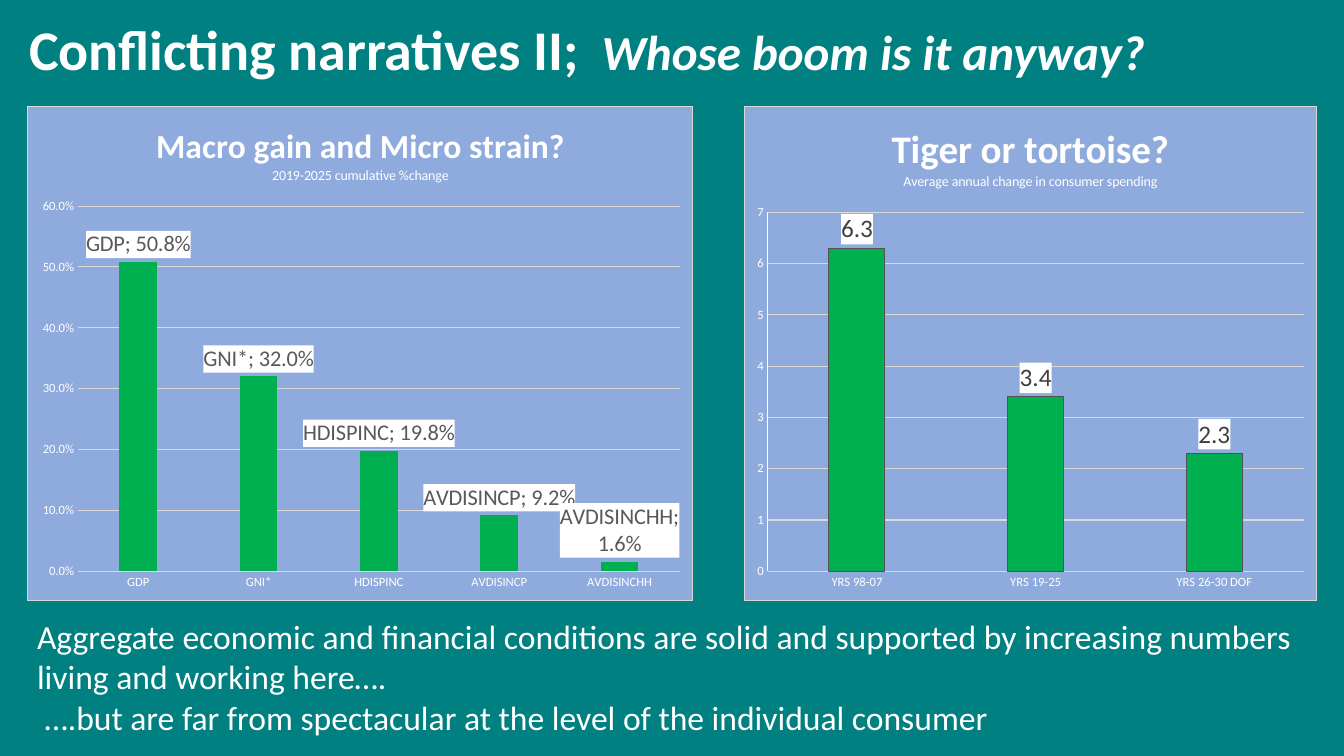
from pptx import Presentation, util as u, oxml
from pptx.chart import data as cd
from pptx.dml import color as col
from pptx.enum import chart as ce, text as te
from pptx.oxml import ns

Pt = u.Pt
theme = {
    "face": "Calibri",
    "back": "008080", "panel": "8FAADC", "bar": "00B050", "edge": "525252",
    "white": "FFFFFF", "rule": "D9D9D9", "black": "000000",
    "head": 40, "gap": 36, "ask": 35, "body": 24, "sub": 10, "axis": 9, "base": 10,
}


def style(font, size, color, **more):
    values = {"name": theme["face"], "size": Pt(size), **more}
    for key, value in values.items():
        setattr(font, key, value)
    font.color.rgb = col.RGBColor.from_string(color)


def paint(fill, line=""):
    edge = f'<a:ln w="9525"><a:solidFill><a:srgbClr val="{line}"/></a:solidFill></a:ln>' if line else ""
    return oxml.parse_xml(
        f'<c:spPr {ns.nsdecls("c", "a")}><a:solidFill><a:srgbClr val="{fill}"/></a:solidFill>{edge}</c:spPr>')


deck = Presentation()
deck.slide_width, deck.slide_height = Pt(960), Pt(540)
slide = deck.slides.add_slide(deck.slide_layouts[6])
slide.background.fill.solid()
slide.background.fill.fore_color.rgb = col.RGBColor.from_string(theme["back"])

texts = [
    ((13.7, 6.5, 921, 55.4), [
        (0, [("Conflicting narratives II;", theme["head"], {"bold": True}, 0),
             (" ", theme["gap"], {"italic": True}, 8),
             ("Whose boom is it anyway?", theme["ask"], {"bold": True, "italic": True}, 0)])]),
    ((19.4, 436.3, 940.6, 94.3), [
        (0, [("Aggregate economic and financial conditions are solid and supported by "
              "increasing numbers living and working here….", theme["body"], {}, 0)]),
        (5.4, [("….but are far from spectacular at the level of the individual consumer",
                theme["body"], {}, 0)])]),
]
for place, paras in texts:
    frame = slide.shapes.add_textbox(*map(Pt, place)).text_frame
    frame.word_wrap = True
    frame.auto_size = te.MSO_AUTO_SIZE.SHAPE_TO_FIT_TEXT
    for i, (indent, runs) in enumerate(paras):
        para = frame.add_paragraph() if i else frame.paragraphs[0]
        if indent:
            para._p.get_or_add_pPr().set("marL", str(Pt(indent)))
        for words, size, more, space in runs:
            run = para.add_run()
            run.text = words
            style(run.font, size, theme["white"], **more)
            if space:
                run.font._element.set("spc", str(space * 100))

panels = [
    {"place": (531.4, 75.6, 409, 353.5), "plot": (548, 151.5, 383.5, 257),
     "title": ("Tiger or tortoise?", 28), "sub": "Average annual change in consumer spending",
     "data": {"YRS 98-07": 6.3, "YRS 19-25": 3.4, "YRS 26-30 DOF": 2.3},
     "top": 7, "step": 1, "form": "General", "label": (18, "404040"),
     "cat": False, "axis": True, "edge": True},
    {"place": (19.4, 75.6, 476, 353.5), "plot": (55.5, 147, 430.5, 261.5),
     "title": ("Macro gain and Micro strain?", 24), "sub": "2019-2025 cumulative %change",
     "data": {"GDP": 0.508, "GNI*": 0.32, "HDISPINC": 0.198, "AVDISINCP": 0.092, "AVDISINCHH": 0.016},
     "top": 0.6, "step": 0.1, "form": "0.0%", "label": (16, "595959"),
     "cat": True, "axis": False, "edge": False},
]
for panel in panels:
    data = cd.CategoryChartData(number_format=panel["form"])
    data.categories = list(panel["data"])
    data.add_series("Series 1", list(panel["data"].values()))
    chart = slide.shapes.add_chart(
        ce.XL_CHART_TYPE.COLUMN_CLUSTERED, *map(Pt, panel["place"]), data).chart
    style(chart.font, theme["base"], theme["black"])
    chart.has_legend = False
    root = chart.element
    root.find(ns.qn("c:chart")).addnext(paint(theme["panel"], theme["rule"]))

    frame = chart.chart_title.text_frame
    lines = [(*panel["title"], True), (panel["sub"], theme["sub"], False)]
    for i, (words, size, bold) in enumerate(lines):
        para = frame.add_paragraph() if i else frame.paragraphs[0]
        run = para.add_run()
        run.text = words
        style(run.font, size, theme["white"], bold=bold)

    left, top, wide, high = panel["place"]
    x, y, w, h = panel["plot"]
    parts = {"x": (x - left) / wide, "y": (y - top) / high, "w": w / wide, "h": h / high}
    marks = "".join(f'<c:{k} val="{v:.4f}"/>' for k, v in parts.items())
    area = root.find(".//" + ns.qn("c:plotArea"))
    for old in area.findall(ns.qn("c:layout")):
        area.remove(old)
    area.insert(0, oxml.parse_xml(
        f'<c:layout {ns.nsdecls("c")}><c:manualLayout><c:layoutTarget val="inner"/>'
        f'<c:xMode val="edge"/><c:yMode val="edge"/>{marks}</c:manualLayout></c:layout>'))

    cats, vals = chart.category_axis, chart.value_axis
    for axis, shade in ((cats, theme["rule"]), (vals, theme["white"])):
        axis.major_tick_mark = axis.minor_tick_mark = ce.XL_TICK_MARK.NONE
        style(axis.tick_labels.font, theme["axis"], theme["white"])
        axis.format.line.width = Pt(0.75)
        axis.format.line.color.rgb = col.RGBColor.from_string(shade)
    if not panel["axis"]:
        vals.format.line.fill.background()
    scale = {"minimum_scale": 0, "maximum_scale": panel["top"],
             "major_unit": panel["step"], "has_major_gridlines": True}
    for key, value in scale.items():
        setattr(vals, key, value)
    vals.tick_labels.number_format = panel["form"]
    vals.tick_labels.number_format_is_linked = False
    grid = vals.major_gridlines.format.line
    grid.width = Pt(0.75)
    grid.color.rgb = col.RGBColor.from_string(theme["rule"])

    plot = chart.plots[0]
    for key, value in {"gap_width": 219, "overlap": -27, "vary_by_categories": False}.items():
        setattr(plot, key, value)
    bars = plot.series[0]
    bars.format.fill.solid()
    bars.format.fill.fore_color.rgb = col.RGBColor.from_string(theme["bar"])
    if panel["edge"]:
        bars.format.line.width = Pt(0.75)
        bars.format.line.color.rgb = col.RGBColor.from_string(theme["edge"])

    tags = bars.data_labels
    look = {"show_value": True, "show_category_name": panel["cat"],
            "number_format": panel["form"], "number_format_is_linked": False,
            "position": ce.XL_LABEL_POSITION.OUTSIDE_END}
    for key, value in look.items():
        setattr(tags, key, value)
    style(tags.font, *panel["label"])
    node = bars._element.find(ns.qn("c:dLbls"))
    node.find(ns.qn("c:txPr")).addprevious(paint(theme["white"]))
    node.find(ns.qn("c:showBubbleSize")).addnext(
        oxml.parse_xml(f'<c:separator {ns.nsdecls("c")}>; </c:separator>'))

deck.save("out.pptx")
